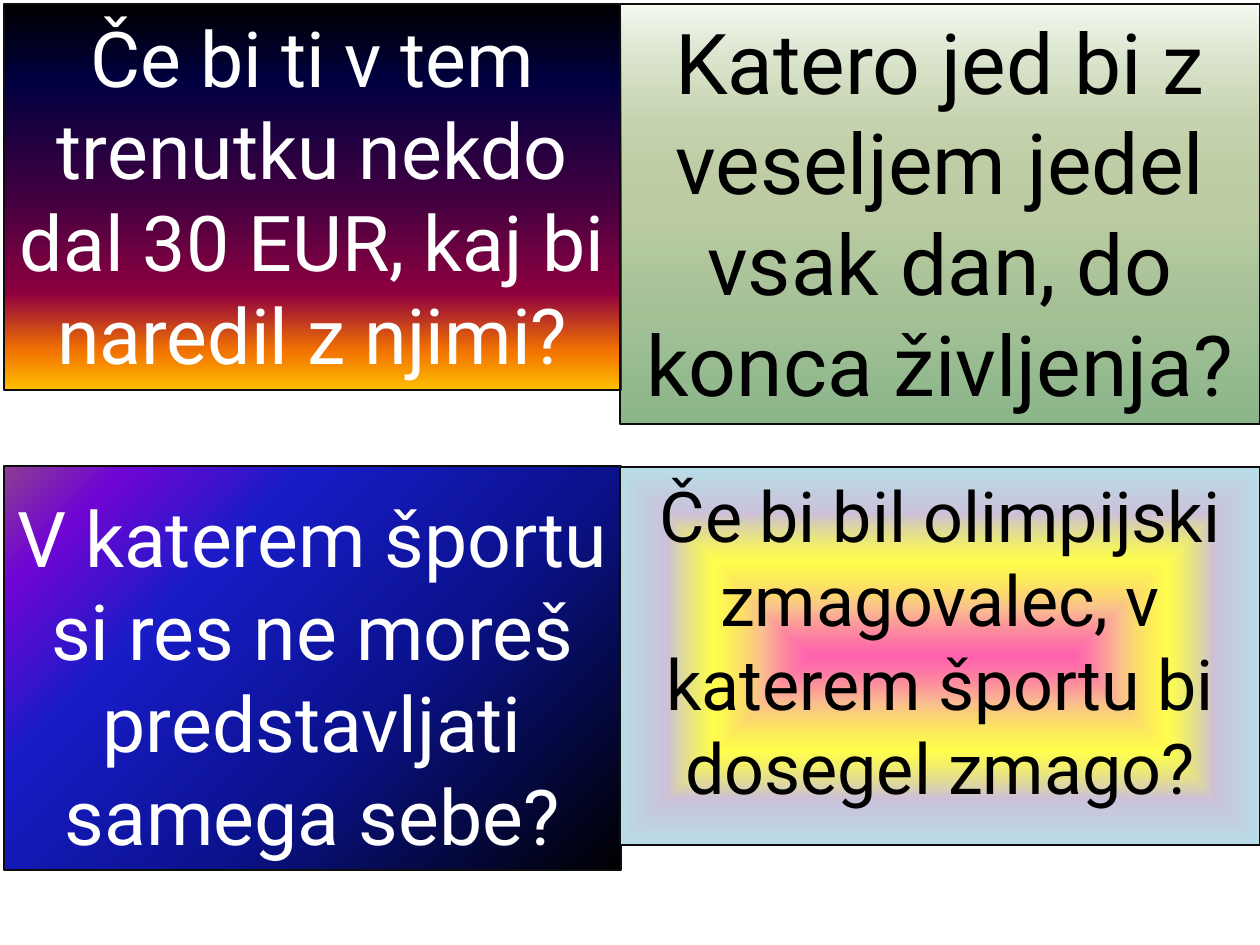
from lxml.etree import SubElement
from pptx import Presentation
from pptx.dml.color import RGBColor
from pptx.enum.shapes import MSO_SHAPE as Preset
from pptx.enum.text import MSO_ANCHOR as Anchor, MSO_AUTO_SIZE as AutoSize, PP_ALIGN as Align
from pptx.oxml.ns import qn
from pptx.util import Emu, Pt

EMU_PER_PX = 914400 / 126
COLORS = {"outline": "0D0D0D", "light": "FFFFFF", "dark": "000000"}

# Gradient stops: position %, colour, opacity %
SUNSET = [(0, "000000", 100), (20, "000040", 100), (50, "400040", 100),
          (75, "8F0040", 100), (90, "F27300", 100), (100, "FFBF00", 100)]
MEADOW = [(0, "F6FAF3", 100), (50, "7E9C4C", 51), (100, "156B13", 49)]
NIGHT = [(0, "000000", 100), (40, "0A128C", 100), (70, "181CC7", 100),
         (88, "7005D4", 100), (100, "8C3D91", 100)]
RAINBOW = [(0, "FF3399", 77), (25, "FAC090", 100), (50, "FFFF00", 69),
           (75, "CCC1DA", 100), (100, "B7DEE8", 100)]


def px(length):
    return Emu(round(length * EMU_PER_PX))


def color(name):
    return RGBColor.from_string(COLORS[name])


def fill_gradient(card, stops, shade=None, focus=None):
    """Fill downwards, or around a focus (l, t, r, b in %) when a shade is named."""
    card.fill.gradient()
    gradient = card._element.spPr.find(qn("a:gradFill"))
    for child in list(gradient):
        gradient.remove(child)
    gradient.set("rotWithShape", "1")
    stop_list = SubElement(gradient, qn("a:gsLst"))
    for position, hex_color, opacity in stops:
        stop = SubElement(stop_list, qn("a:gs"), pos=str(position * 1000))
        tint = SubElement(stop, qn("a:srgbClr"), val=hex_color)
        if opacity < 100:
            SubElement(tint, qn("a:alpha"), val=str(opacity * 1000))
    if shade:
        target = SubElement(gradient, qn("a:path"), {"path": shade})
        edges = {edge: str(share * 1000) for edge, share in zip("ltrb", focus)}
        SubElement(target, qn("a:fillToRect"), edges)
    else:
        SubElement(gradient, qn("a:lin"), ang="5400000", scaled="0")


def write_question(card, text, size, ink, top_inset=6):
    frame = card.text_frame
    frame.word_wrap = True
    frame.auto_size = AutoSize.SHAPE_TO_FIT_TEXT
    frame.vertical_anchor = Anchor.TOP
    frame.margin_top = px(top_inset)
    paragraph = frame.paragraphs[0]
    paragraph.alignment = Align.CENTER
    run = paragraph.add_run()
    run.text = text
    run.font.size = Pt(size)
    run.font.name = "Roboto"
    run.font.color.rgb = color(ink)


def add_card(slide, left, top, width, height, **gradient):
    card = slide.shapes.add_shape(Preset.RECTANGLE, px(left), px(top), px(width), px(height))
    card.shadow.inherit = False
    fill_gradient(card, **gradient)
    card.line.color.rgb = color("outline")
    card.line.width = Pt(0.75)
    return card


def main():
    deck = Presentation()
    deck.slide_width, deck.slide_height = px(1260), px(945)
    slide = deck.slides.add_slide(deck.slide_layouts[6])

    # Two columns of question cards
    left_column, right_column = (4, 617), (620, 640)

    # Top row
    (left, width) = left_column
    money = add_card(slide, left, 4, width, 386, stops=SUNSET)
    write_question(money, "Če bi ti v tem trenutku nekdo dal 30 EUR, kaj bi naredil z njimi?",
                   size=44, ink="light")
    (left, width) = right_column
    food = add_card(slide, left, 4, width, 420, stops=MEADOW)
    write_question(food, "Katero jed bi z veseljem jedel vsak dan, do konca življenja?",
                   size=48, ink="dark")

    # Bottom row
    (left, width) = left_column
    sport = add_card(slide, left, 466, width, 404, stops=NIGHT,
                     shade="circle", focus=(100, 100, 0, 0))
    write_question(sport, "V katerem športu si res ne moreš predstavljati samega sebe?",
                   size=44, ink="light", top_inset=25)
    (left, width) = right_column
    olympics = add_card(slide, left, 467, width, 378, stops=RAINBOW,
                        shade="shape", focus=(50, 50, 50, 50))
    write_question(olympics, "Če bi bil olimpijski zmagovalec, v katerem športu bi dosegel zmago?",
                   size=40, ink="dark")

    deck.save("out.pptx")


if __name__ == "__main__":
    main()
